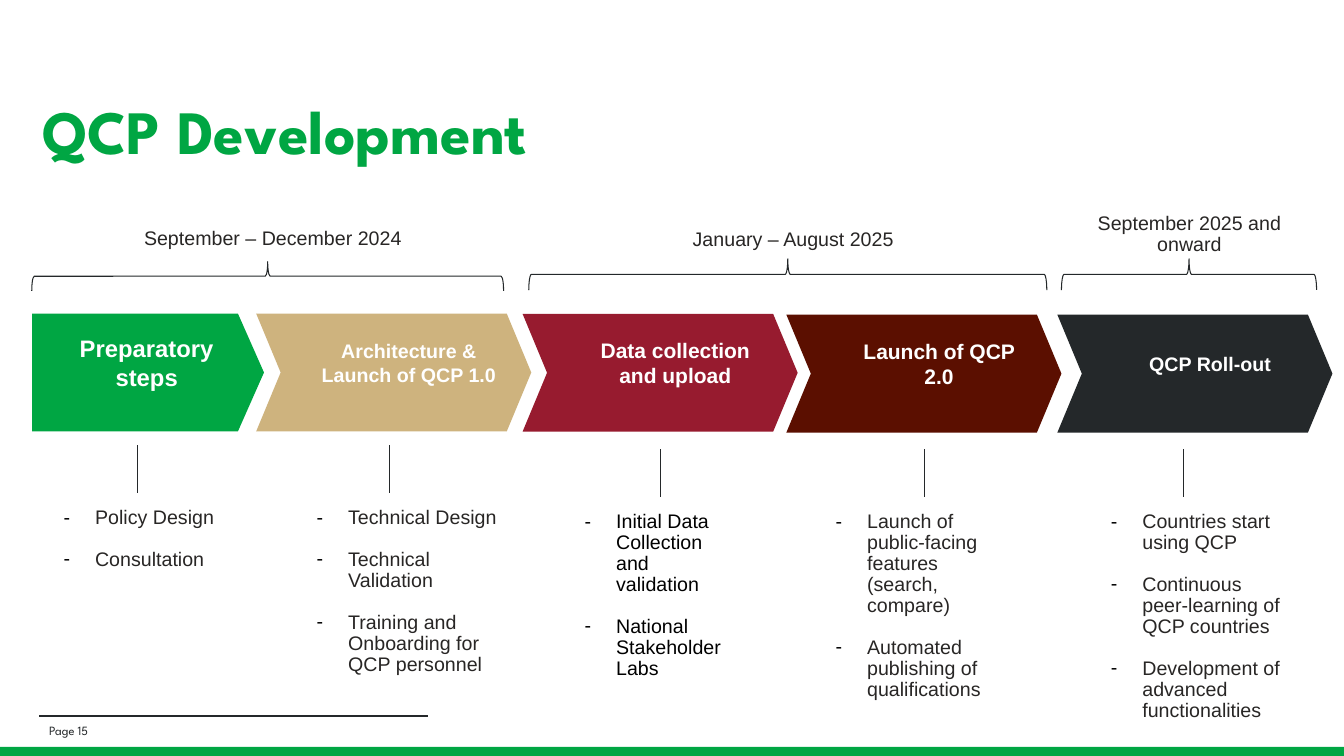
"""Build the QCP development timeline slide."""
from dataclasses import dataclass

from lxml.etree import SubElement
from pptx import Presentation
from pptx.dml.color import RGBColor
from pptx.enum.shapes import MSO_CONNECTOR as Connector, MSO_SHAPE as Shape
from pptx.enum.text import MSO_ANCHOR as Anchor, MSO_AUTO_SIZE as AutoSize, PP_ALIGN as Align
from pptx.oxml.ns import qn
from pptx.util import Pt


@dataclass(frozen=True)
class Theme:
    green: str = "00A643"
    sand: str = "CEB37E"
    crimson: str = "971B2F"
    maroon: str = "5B0F00"
    charcoal: str = "24282A"
    text: str = "282625"
    black: str = "000000"
    white: str = "FFFFFF"
    heading_font: str = "League Spartan"
    body_font: str = "Arial"
    title_size: int = 44
    body_size: int = 14
    page_size: int = 9


theme = Theme()


def prepare_frame(shape, insets, anchor):
    frame = shape.text_frame
    frame.word_wrap = True
    frame.auto_size = AutoSize.NONE
    frame.vertical_anchor = anchor
    frame.margin_left, frame.margin_top, frame.margin_right, frame.margin_bottom = map(Pt, insets)
    return frame


def write(paragraph, text, size, color, align=Align.LEFT, bold=False, font=theme.body_font):
    paragraph.alignment = align
    run = paragraph.add_run()
    run.text = text
    run.font.name = font
    run.font.size = Pt(size)
    run.font.bold = bold
    run.font.color.rgb = RGBColor.from_string(color)


presentation = Presentation()
presentation.slide_width = Pt(960)
presentation.slide_height = Pt(540)
slide = presentation.slides.add_slide(presentation.slide_layouts.get_by_name("Comparison"))
shapes = slide.shapes

title = shapes.title
title.left, title.top, title.width, title.height = Pt(23), Pt(51), Pt(903), Pt(90.7)
paragraph = prepare_frame(title, (7.2, 3.6, 7.2, 3.6), Anchor.MIDDLE).paragraphs[0]
paragraph.line_spacing = 0.9
write(paragraph, "QCP Development", theme.title_size, theme.green, bold=True, font=theme.heading_font)

footer_bar = shapes.add_shape(Shape.RECTANGLE, 0, Pt(533.5), Pt(960), Pt(6.5))
footer_bar.shadow.inherit = False
footer_bar.fill.solid()
footer_bar.fill.fore_color.rgb = RGBColor.from_string(theme.green)
footer_bar.line.fill.background()

page_label = shapes.add_textbox(Pt(28), Pt(515.5), Pt(257), Pt(13))
paragraph = prepare_frame(page_label, (7.2, 3.6, 7.2, 3.6), Anchor.MIDDLE).paragraphs[0]
write(paragraph, "Page 15", theme.page_size, theme.charcoal, font=theme.heading_font)

phases = [
    ("Preparatory steps", 17, theme.green, 23, 224),
    ("Architecture & Launch of QCP 1.0", 14, theme.sand, 183, 224),
    ("Data collection and upload", 15, theme.crimson, 373.3, 224.2),
    ("Launch of QCP 2.0", 15, theme.maroon, 561.7, 224.8),
    ("QCP Roll-out", 14, theme.charcoal, 755.3, 224.8),
]
for index, (name, size, color, left, top) in enumerate(phases):
    first = index == 0
    kind, width, point, inset = (
        (Shape.PENTAGON, 165.6, 0.221, 14.4) if first else (Shape.CHEVRON, 196.5, 0.208, 28.8)
    )
    arrow = shapes.add_shape(kind, Pt(left), Pt(top), Pt(width), Pt(84.2))
    arrow.adjustments[0] = point
    arrow.shadow.inherit = False
    arrow.fill.solid()
    arrow.fill.fore_color.rgb = RGBColor.from_string(color)
    arrow.line.fill.background()
    paragraph = prepare_frame(arrow, (inset, 0, 7.2, 14.4), Anchor.MIDDLE).paragraphs[0]
    write(paragraph, name, size, theme.white, Align.CENTER, bold=True)

periods = [
    ("September – December 2024", 30, 160, 330, 191.2, 197.3, 337, 20.9),
    ("January – August 2025", 381.6, 160.6, 370, 562.7, 196, 370, 22.3),
    ("September 2025 and onward", 739.5, 149, 220.3, 849.3, 196, 182.2, 22.3),
]
for label, left, top, width, center, middle, span, depth in periods:
    period_box = shapes.add_textbox(Pt(left), Pt(top), Pt(width), Pt(27.4))
    paragraph = prepare_frame(period_box, (38.2, 3.6, 38.2, 9.4), Anchor.TOP).paragraphs[0]
    paragraph.line_spacing = 0.89
    write(paragraph, label, theme.body_size, theme.text, Align.CENTER)
    brace = shapes.add_shape(
        Shape.LEFT_BRACE, Pt(center - depth / 2), Pt(middle - span / 2), Pt(depth), Pt(span)
    )
    brace.rotation = 90
    brace.shadow.inherit = False
    brace.fill.background()
    brace.line.color.rgb = RGBColor.from_string(theme.charcoal)
    brace.line.width = Pt(0.75)

activities = [
    (7.2, 359.3, 196.5, 38.2, theme.text, ["Policy Design", "Consultation"]),
    (188, 359.3, 206, 38.2, theme.text,
     ["Technical Design", "Technical Validation", "Training and Onboarding for QCP personnel"]),
    (379.4, 362.2, 182.2, 38.2, theme.black,
     ["Initial Data Collection and validation", "National Stakeholder Labs"]),
    (561.6, 362.2, 196.5, 35.3, theme.text,
     ["Launch of public-facing features (search, compare)", "Automated publishing of qualifications"]),
    (758.2, 362.2, 196.5, 35.3, theme.text,
     ["Countries start using QCP", "Continuous peer-learning of QCP countries",
      "Development of advanced functionalities"]),
]
list_boxes = [box for box in slide.placeholders if box.placeholder_format.idx > 0]
list_boxes.append(shapes.add_textbox(0, 0, 0, 0))
for box, (left, top, width, inset, color, items) in zip(list_boxes, activities):
    box.left, box.top, box.width, box.height = Pt(left), Pt(top), Pt(width), Pt(150)
    frame = prepare_frame(box, (inset, 3.6, 38.2, 9.4), Anchor.TOP)
    for index, item in enumerate(items):
        paragraph = frame.add_paragraph() if index else frame.paragraphs[0]
        properties = paragraph._p.get_or_add_pPr()
        properties.set("marL", str(Pt(22.5)))
        properties.set("indent", str(-Pt(22.5)))
        bullet_color = SubElement(properties, qn("a:buClr"))
        SubElement(bullet_color, qn("a:srgbClr"), val=theme.black)
        SubElement(properties, qn("a:buFont"), typeface=theme.body_font)
        SubElement(properties, qn("a:buChar"), char="-")
        paragraph.line_spacing = 0.89
        paragraph.space_before = Pt(15 if index else 0)
        write(paragraph, item, theme.body_size, color)

rules = [(x, top, x, top + 34, 0.75) for x, top in
         [(98, 318), (278, 318), (471.6, 321), (660.2, 321), (845.3, 321)]]
rules.append((28, 511.7, 305.5, 511.7, 1.5))
for start_x, start_y, end_x, end_y, weight in rules:
    rule = shapes.add_connector(Connector.STRAIGHT, Pt(start_x), Pt(start_y), Pt(end_x), Pt(end_y))
    rule.line.color.rgb = RGBColor.from_string(theme.charcoal)
    rule.line.width = Pt(weight)
    SubElement(rule._element.spPr, qn("a:effectLst"))

presentation.save("out.pptx")
